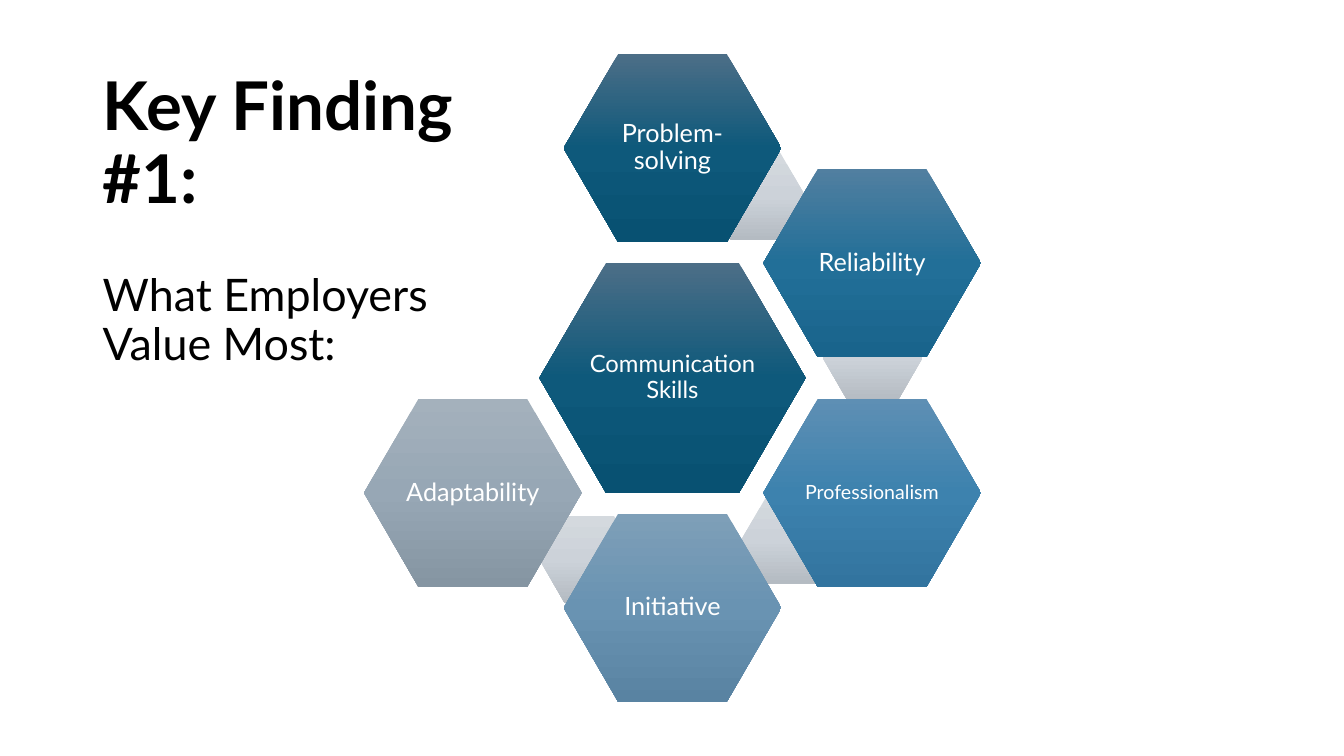
from copy import deepcopy

from pptx import Presentation
from pptx.dml.color import RGBColor
from pptx.enum.shapes import MSO_SHAPE as SHAPE
from pptx.enum.text import MSO_ANCHOR as ANCHOR, MSO_AUTO_SIZE as AUTO, PP_ALIGN as ALIGN
from pptx.oxml.ns import qn
from pptx.util import Pt

PX = 9144
FONT = "Lato"
BLACK = RGBColor(0x00, 0x00, 0x00)
WHITE = RGBColor(0xFF, 0xFF, 0xFF)


def gradient(*codes):
    return [RGBColor.from_string(code) for code in codes]


NAVY = gradient("4C6E87", "0E597B", "085172")
TEAL = gradient("517FA0", "226F98", "19648C")
BLUE = gradient("5E8FB4", "3D82AE", "32749F")
STEEL = gradient("7E9FB8", "6993B2", "5983A2")
SLATE = gradient("A4B1BC", "97A7B5", "8595A2")
LINK = gradient("D4D9DE", "CCD2D9", "B4BBC2")

CENTER_X, CENTER_Y = 667, 375
STEP_X, STEP_Y = 198, 114
CORE_SIZE = 264, 228
SKILL_SIZE = 216, 187
LINK_SIZE = 99, 86
SKILLS = [
    ("Problem-solving", 18, NAVY, 0, -2, (700, 152)),
    ("Reliability", 18, TEAL, 1, -1, (816, 312)),
    ("Professionalism", 14, BLUE, 1, 1, (735, 493)),
    ("Initiative", 18, STEEL, 0, 2, (535, 512)),
    ("Adaptability", 18, SLATE, -1, 1, None),
]


def px(*values):
    return [round(value * PX) for value in values]


def write(tf, text, size, color, align, anchor, bold=False):
    tf.word_wrap = True
    tf.auto_size = AUTO.NONE
    tf.vertical_anchor = anchor
    p = tf.paragraphs[0]
    p.alignment = align
    p.line_spacing = 0.9
    r = p.add_run()
    r.text = text
    r.font.name = FONT
    r.font.size = Pt(size)
    r.font.bold = bold
    r.font.color.rgb = color


def fill_gradient(sp, colors):
    sp.fill.gradient()
    sp.fill.gradient_angle = 270
    stops = sp._element.spPr.find(qn("a:gradFill")).find(qn("a:gsLst"))
    stops.append(deepcopy(stops[0]))
    for stop, position, color in zip(sp.fill.gradient_stops, (0, 0.5, 1), colors):
        stop.position = position
        stop.color.rgb = color


def add_hexagon(s, left, top, size, colors):
    sp = s.shapes.add_shape(SHAPE.HEXAGON, *px(left, top, *size))
    sp.adjustments[0] = 0.29
    sp.shadow.inherit = False
    sp.line.fill.background()
    fill_gradient(sp, colors)
    return sp


def add_skill(s, text, size, colors, col, row, box):
    width, height = box
    left = CENTER_X + col * STEP_X - width / 2
    top = CENTER_Y + row * STEP_Y - height / 2
    tf = add_hexagon(s, left, top, box, colors).text_frame
    tf.margin_left = tf.margin_right = tf.margin_top = tf.margin_bottom = 2 * PX
    write(tf, text, size, WHITE, ALIGN.CENTER, ANCHOR.MIDDLE)


def add_title(s, text):
    title = s.shapes.title
    title.left, title.top, title.width, title.height = px(92, 40, 418, 208)
    write(title.text_frame, text, 48, BLACK, ALIGN.LEFT, ANCHOR.MIDDLE, True)


def add_subtitle(s, text):
    sp = s.shapes.add_textbox(*px(92, 266, 343, 119))
    write(sp.text_frame, text, 32, BLACK, ALIGN.LEFT, ANCHOR.TOP)


def main():
    prs = Presentation()
    prs.slide_width, prs.slide_height = px(1333, 750)
    s = prs.slides.add_slide(prs.slide_layouts[5])
    add_title(s, "Key Finding #1:")
    add_subtitle(s, "What Employers Value Most:")
    add_skill(s, "Communication Skills", 17, NAVY, 0, 0, CORE_SIZE)
    for text, size, colors, col, row, link in SKILLS:
        if link:
            add_hexagon(s, *link, LINK_SIZE, LINK)
        add_skill(s, text, size, colors, col, row, SKILL_SIZE)
    prs.save("out.pptx")


if __name__ == "__main__":
    main()
